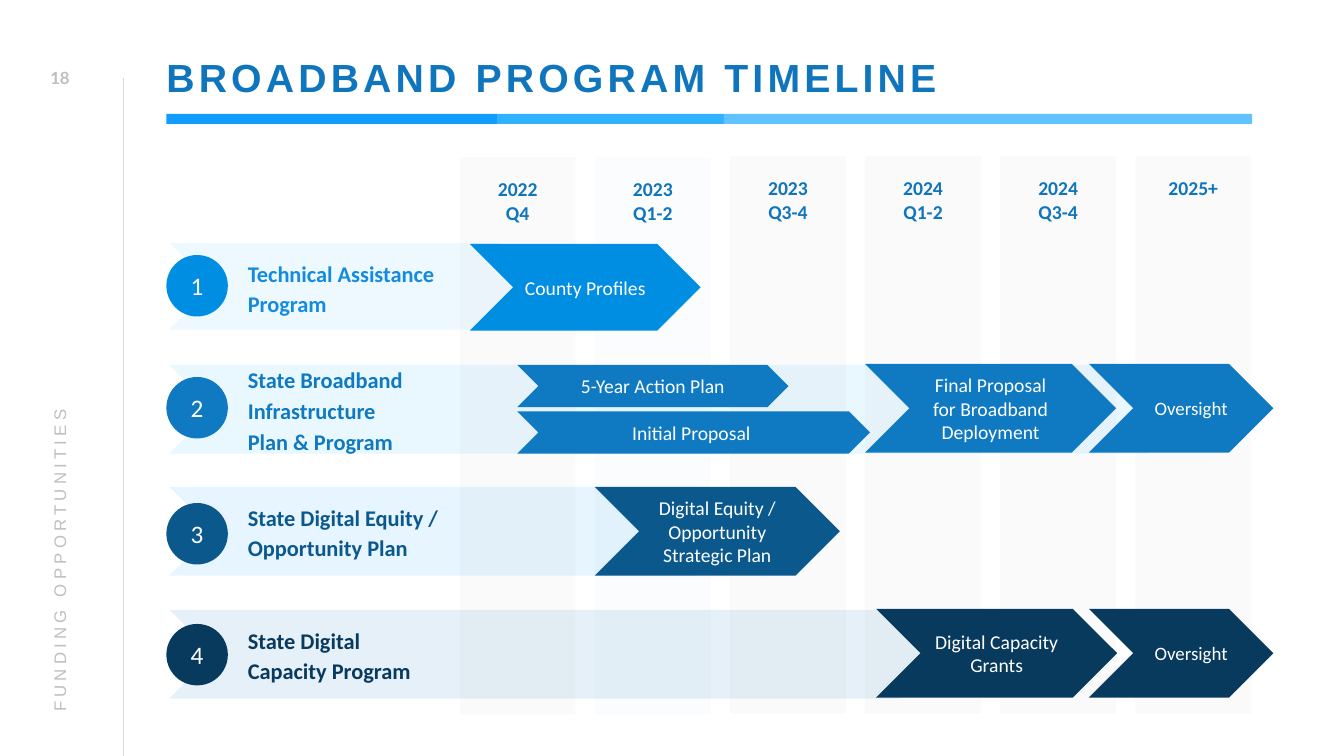
"""Build the broadband program timeline slide."""
from lxml import etree
from pptx import Presentation
from pptx.dml.color import RGBColor
from pptx.enum.shapes import MSO_CONNECTOR, MSO_SHAPE as SHAPE
from pptx.enum.text import MSO_ANCHOR as ANCHOR, PP_ALIGN as ALIGN
from pptx.oxml.ns import qn
from pptx.util import Inches, Pt

COLORS = {
    "title": "0F75BC", "muted": "BFBFBF", "rule": "D9D9D9",
    "white": "FFFFFF", "black": "000000",
}


def add_block(kind, box, color, alpha=None):
    sp = s.shapes.add_shape(kind, *[Inches(v) for v in box])
    sp.shadow.inherit = False
    sp.line.fill.background()
    sp.fill.solid()
    sp.fill.fore_color.rgb = RGBColor.from_string(color)
    if alpha:
        clr = sp.fill._xPr.find(qn("a:solidFill"))[0]
        etree.SubElement(clr, qn("a:alpha")).set("val", str(alpha * 1000))
    return sp


def write(sp, text, size, color, font="Calibri", bold=False, align=ALIGN.CENTER,
          anchor=ANCHOR.MIDDLE, insets=(0.1, 0.05, 0.1, 0.05), spacing=None):
    tf = sp.text_frame
    tf.word_wrap = True
    tf.vertical_anchor = anchor
    tf.margin_left, tf.margin_top, tf.margin_right, tf.margin_bottom = [
        Inches(v) for v in insets]
    p = tf.paragraphs[0]
    p.text = text
    p.alignment = align
    p.font.name, p.font.size, p.font.bold = font, Pt(size), bold
    p.font.color.rgb = RGBColor.from_string(color)
    if spacing:
        for r in p.runs:
            r.font._element.set("spc", str(spacing * 100))
    return p


prs = Presentation()
prs.slide_width, prs.slide_height = Inches(13.33), Inches(7.5)
s = prs.slides.add_slide(prs.slide_layouts[5])

rule = s.shapes.add_connector(
    MSO_CONNECTOR.STRAIGHT, Inches(1.22), Inches(7.5), Inches(1.22), Inches(0.77))
rule.line.color.rgb = RGBColor.from_string(COLORS["rule"])
rule.line.width = Pt(0.5)
etree.SubElement(rule._element.spPr, qn("a:effectLst"))

for x, w, color in [(1.65, 3.28, "119DFF"), (4.93, 2.25, "31B2FF"), (7.18, 5.24, "62C1FF")]:
    add_block(SHAPE.RECTANGLE, (x, 1.13, w, 0.1), color)

title = s.shapes.title
title.left, title.top, title.width, title.height = [
    Inches(v) for v in (1.65, 0.4, 10.76, 0.74)]
p = write(title, "BROADBAND PROGRAM TIMELINE", 28, COLORS["title"], "Arial", True,
          ALIGN.LEFT, insets=(0, 0.05, 0, 0), spacing=3)
p.line_spacing = 0.9

section = s.shapes.add_textbox(Inches(-2.42), Inches(3.95), Inches(6.02), Inches(0.4))
section.rotation = 270
write(section, "FUNDING OPPORTUNITIES", 12, COLORS["muted"], "Arial",
      align=ALIGN.LEFT, spacing=3)
number = s.shapes.add_textbox(Inches(0.27), Inches(0.57), Inches(0.65), Inches(0.4))
write(number, "18", 12, COLORS["muted"], "Lato", True)

periods = ["2022\nQ4", "2023\nQ1-2", "2023\nQ3-4", "2024\nQ1-2", "2024\nQ3-4", "2025+"]
for i, period in enumerate(periods):
    tint = COLORS["title"] if i == 1 else COLORS["black"]
    top = 1.56 if i < 2 else 1.55
    column = add_block(SHAPE.RECTANGLE, (4.56 + 1.34 * i, top, 1.15, 5.53), tint, 2)
    write(column, period, 14, COLORS["title"], bold=True, anchor=ANCHOR.TOP, insets=[0.2] * 4)

# Each program: label, label colour, main colour, band (top, width, height, tint),
programs = [
    ("Technical Assistance Program", "138CDF", "008EE3", (2.41, 3.71, 0.86, "61C1FF"), 2.53,
     [("County Profiles", 4.66, 2.42, 2.29, 0.86)]),
    ("State Broadband Infrastructure\nPlan & Program", "0F79C1", "0F79C1",
     (3.62, 10.15, 0.88, "30B1FF"), 3.74,
     [("5-Year Action Plan", 5.13, 3.62, 2.69, 0.42),
      ("Initial Proposal ", 5.13, 4.08, 3.5, 0.42),
      ("Oversight", 10.8, 3.61, 1.83, 0.88),
      ("Final Proposal\nfor Broadband Deployment", 8.58, 3.61, 2.49, 0.88)]),
    ("State Digital Equity / Opportunity Plan", "0B588D", "0B588D",
     (4.83, 5.65, 0.88, "109DFF"), 4.99,
     [("Digital Equity / Opportunity Strategic Plan", 5.9, 4.83, 2.43, 0.88)]),
    ("State Digital\nCapacity Program", "083A5E", "083A5E", (6.05, 7.69, 0.88, "0F75BC"), 6.19,
     [("Digital Capacity Grants", 8.69, 6.04, 2.39, 0.88),
      ("Oversight", 10.8, 6.04, 1.83, 0.88)]),
]
for n, (label, label_color, color, band, circle_top, phases) in enumerate(programs, 1):
    top, width, height, tint = band
    add_block(SHAPE.CHEVRON, (1.68, top, width, height), tint, 10)
    name = s.shapes.add_textbox(Inches(2.36), Inches(top), Inches(2.2), Inches(0.87))
    p = write(name, label, 16, label_color, bold=True, align=ALIGN.LEFT)
    p.line_spacing, p.space_after = 1.14, Pt(6)
    circle = add_block(SHAPE.OVAL, (1.65, circle_top, 0.61, 0.61), color)
    write(circle, str(n), 18, COLORS["white"], insets=[0] * 4)
    for text, *box in phases:
        chevron = add_block(SHAPE.CHEVRON, box, color)
        if text == "Oversight":
            write(chevron, text, 13.5, COLORS["white"], insets=(0.2, 0.05, 0, 0.05))
        else:
            write(chevron, text, 14, COLORS["white"])

prs.save("out.pptx")
